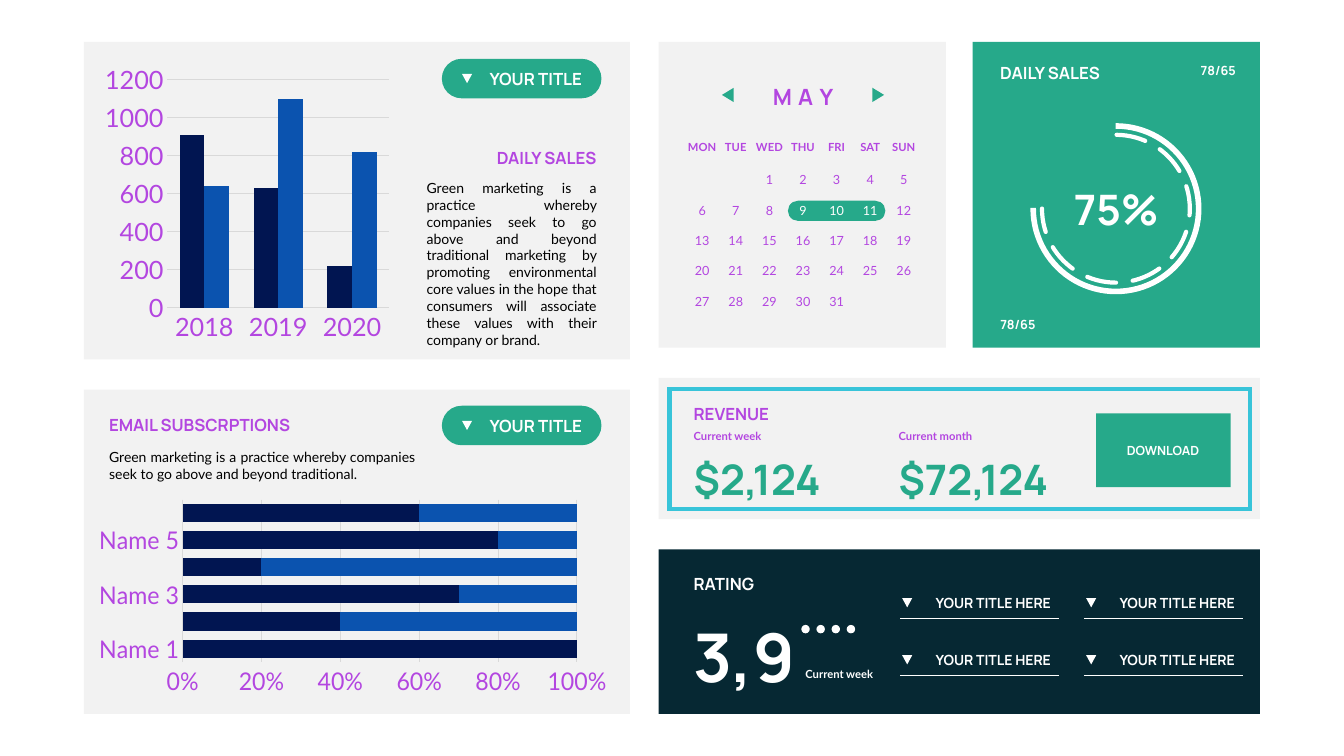
from dataclasses import dataclass
from typing import NamedTuple, Optional, Union

import lxml.etree
import pptx
import pptx.chart.chart
import pptx.chart.data
import pptx.dml.color
import pptx.enum.chart
import pptx.enum.dml
import pptx.enum.shapes
import pptx.enum.text
import pptx.oxml.ns
import pptx.shapes.autoshape
import pptx.shapes.shapetree
import pptx.util

RGB = pptx.dml.color.RGBColor
WHITE = RGB(0xFF, 0xFF, 0xFF)
BLACK = RGB(0x00, 0x00, 0x00)
PANEL_GRAY = RGB(0xF2, 0xF2, 0xF2)
GRID_GRAY = RGB(0xD9, 0xD9, 0xD9)
GREEN = RGB(0x26, 0xA9, 0x8A)
PURPLE = RGB(0xB3, 0x46, 0xE0)
CYAN = RGB(0x38, 0xC4, 0xD9)
INK = RGB(0x06, 0x28, 0x33)
NAVY = RGB(0x01, 0x15, 0x51)
BLUE = RGB(0x0B, 0x53, 0xAF)

HEADING_FONT, BODY_FONT = "Manrope", "Lato"
COLUMNS, ROWS = 160, 90
SLIDE_WIDTH, SLIDE_HEIGHT = pptx.util.Inches(13.33), pptx.util.Inches(7.5)

Form = pptx.enum.shapes.MSO_SHAPE
Align = pptx.enum.text.PP_ALIGN
Anchor = pptx.enum.text.MSO_ANCHOR
ChartKind = pptx.enum.chart.XL_CHART_TYPE
Shapes = Union[pptx.shapes.shapetree.SlideShapes, pptx.shapes.shapetree.GroupShapes]
qn = pptx.oxml.ns.qn


class Box(NamedTuple):
    column: float
    row: float
    columns: float
    rows: float

    def shifted(self, columns: float, rows: float) -> "Box":
        return self._replace(column=self.column + columns, row=self.row + rows)

    def lengths(self) -> tuple:
        across, down = SLIDE_WIDTH / COLUMNS, SLIDE_HEIGHT / ROWS
        return (round(self.column * across), round(self.row * down),
                round(self.columns * across), round(self.rows * down))


@dataclass
class Block:
    form: Form
    box: Box
    fill: Optional[RGB] = None
    line: Optional[RGB] = None
    weight: float = 1
    rotation: float = 0
    adjustments: tuple = ()


@dataclass
class Label:
    text: str
    box: Box
    size: float
    color: RGB
    font: str = HEADING_FONT
    bold: bool = True
    align: Align = Align.LEFT


@dataclass
class Graph:
    kind: ChartKind
    box: Box
    categories: list
    series: dict
    gap: int
    overlap: int
    number_format: str
    plot_area: Optional[dict] = None


def assign(target: object, values: dict) -> None:
    for name, value in values.items():
        setattr(target, name, value)


def draw_block(shapes: Shapes, block: Block) -> pptx.shapes.autoshape.Shape:
    shape = shapes.add_shape(block.form, *block.box.lengths())
    shape.shadow.inherit = False
    shape.rotation = block.rotation
    for index, value in enumerate(block.adjustments):
        shape.adjustments[index] = value
    for fill, color in ((shape.fill, block.fill), (shape.line.fill, block.line)):
        if color is None:
            fill.background()
        else:
            fill.solid()
            fill.fore_color.rgb = color
    if block.line is not None:
        shape.line.width = pptx.util.Pt(block.weight)
        outline = shape.element.spPr.find(qn("a:ln"))
        lxml.etree.SubElement(outline, qn("a:miter")).set("lim", "800000")
    return shape


def draw_label(shapes: Shapes, label: Label) -> pptx.shapes.autoshape.Shape:
    textbox = shapes.add_textbox(*label.box.lengths())
    frame = textbox.text_frame
    assign(frame, {"word_wrap": False, "vertical_anchor": Anchor.MIDDLE,
                   "auto_size": pptx.enum.text.MSO_AUTO_SIZE.SHAPE_TO_FIT_TEXT})
    paragraph = frame.paragraphs[0]
    paragraph.alignment = label.align
    run = paragraph.add_run()
    run.text = label.text
    assign(run.font, {"name": label.font, "size": pptx.util.Pt(label.size), "bold": label.bold})
    run.font.color.rgb = label.color
    return textbox


def draw_passage(shapes: Shapes, text: str, box: Box) -> None:
    passage = draw_label(shapes, Label(text, box, 10, BLACK, BODY_FONT, False, Align.JUSTIFY))
    assign(passage.text_frame, {"word_wrap": True, "vertical_anchor": Anchor.TOP,
                                "margin_left": pptx.util.Inches(0.05)})


def draw_rule(shapes: Shapes, box: Box) -> None:
    left, top, width, height = box.lengths()
    rule = shapes.add_connector(pptx.enum.shapes.MSO_CONNECTOR.STRAIGHT,
                                left, top, left + width, top + height)
    rule.line.color.rgb = WHITE
    rule.line.width = pptx.util.Pt(1)
    lxml.etree.SubElement(rule.element.spPr, qn("a:effectLst"))


def draw_graph(shapes: Shapes, graph: Graph) -> None:
    data = pptx.chart.data.CategoryChartData()
    data.categories = graph.categories
    for name, values in graph.series.items():
        data.add_series(name, values)
    chart = shapes.add_chart(graph.kind, *graph.box.lengths(), data).chart
    assign(chart, {"has_legend": False, "has_title": False})
    assign(chart.font, {"name": BODY_FONT, "size": pptx.util.Pt(18)})
    chart.font.color.rgb = PURPLE
    plot = chart.plots[0]
    assign(plot, {"gap_width": graph.gap, "overlap": graph.overlap, "vary_by_categories": False})
    for series, color in zip(plot.series, (NAVY, BLUE)):
        series.format.fill.solid()
        series.format.fill.fore_color.rgb = color
    no_tick = pptx.enum.chart.XL_TICK_MARK.NONE
    for axis in (chart.category_axis, chart.value_axis):
        assign(axis, {"major_tick_mark": no_tick, "minor_tick_mark": no_tick})
    chart.category_axis.has_major_gridlines = False
    chart.value_axis.has_major_gridlines = True
    for lines in (chart.category_axis.format, chart.value_axis.major_gridlines.format):
        lines.line.color.rgb = GRID_GRAY
        lines.line.width = pptx.util.Pt(0.75)
    chart.value_axis.format.line.fill.background()
    assign(chart.value_axis.tick_labels,
           {"number_format": graph.number_format, "number_format_is_linked": False})
    if graph.plot_area:
        place_plot(chart, graph.plot_area)


def place_plot(chart: pptx.chart.chart.Chart, plot_area: dict) -> None:
    area = chart.element.find(f".//{qn('c:plotArea')}")
    for former in area.findall(qn("c:layout")):
        area.remove(former)
    layout = lxml.etree.Element(qn("c:layout"))
    area.insert(0, layout)
    manual = lxml.etree.SubElement(layout, qn("c:manualLayout"))
    settings = {"layoutTarget": "inner", "xMode": "edge", "yMode": "edge", **plot_area}
    for name, value in settings.items():
        lxml.etree.SubElement(manual, qn(f"c:{name}")).set("val", str(value))


def draw_calendar(shapes: Shapes) -> None:
    for column, rotation in ((85.8, 270), (103.7, 90)):
        draw_block(shapes, Block(Form.ISOSCELES_TRIANGLE, Box(column, 10.6, 1.7, 1.4), GREEN, rotation=rotation))
    month = draw_label(shapes, Label("MA", Box(90.5, 9.3, 10.2, 4.4), 16, PURPLE, align=Align.CENTER))
    next(month.element.iter(qn("a:rPr"))).set("spc", "450")
    last = month.text_frame.paragraphs[0].add_run()
    last.text = "Y"
    assign(last.font, {"name": HEADING_FONT, "size": pptx.util.Pt(16), "bold": True})
    last.font.color.rgb = PURPLE
    draw_block(shapes, Block(Form.ROUNDED_RECTANGLE, Box(93.8, 23.9, 11.6, 2.4), GREEN, adjustments=(0.5,)))
    cell = Box(80.4, 16.05, 6.4, 2.9)
    for column, weekday in enumerate("MON TUE WED THU FRI SAT SUN".split()):
        draw_label(shapes, Label(weekday, cell.shifted(4 * column, 0), 8, PURPLE, BODY_FONT, align=Align.CENTER))
    for day in range(1, 32):
        week, column = divmod(day + 1, 7)
        color = WHITE if day in (9, 10, 11) else PURPLE
        place = cell.shifted(4 * column, 3.87 + 3.63 * week)
        draw_label(shapes, Label(str(day), place, 9, color, BODY_FONT, False, Align.CENTER))


def draw_gauge(shapes: Shapes) -> None:
    gauge = shapes.add_group_shape().shapes
    draw_block(gauge, Block(Form.ARC, Box(123, 15, 19.7, 19.7), None, WHITE, 4, adjustments=(161.91, 108.3)))
    dashes = draw_block(gauge, Block(Form.ARC, Box(124.05, 16.05, 17.6, 17.6), None, WHITE, 3,
                                     adjustments=(162.32, 108.08)))
    dashes.line.dash_style = pptx.enum.dml.MSO_LINE.LONG_DASH
    dashes.element.spPr.find(qn("a:ln")).set("cap", "rnd")
    draw_label(gauge, Label("75%", Box(126.5, 21.2, 12.8, 7.3), 30, WHITE, align=Align.CENTER))


def draw_title_pill(shapes: Shapes, row: float) -> None:
    draw_block(shapes, Block(Form.ROUNDED_RECTANGLE, Box(52.6, row, 19, 4.7), GREEN, adjustments=(0.5,)))
    draw_label(shapes, Label("YOUR TITLE", Box(57.1, row + 0.55, 13.6, 3.6), 12, WHITE))
    draw_block(shapes, Block(Form.ISOSCELES_TRIANGLE, Box(55, row + 1.8, 1.2, 1.1), WHITE, rotation=180))


def draw_rating_entry(shapes: Shapes, column: float, row: float) -> None:
    draw_label(shapes, Label("YOUR TITLE HERE", Box(column + 3, row, 16.2, 3.2), 10, WHITE))
    draw_block(shapes, Block(Form.ISOSCELES_TRIANGLE, Box(column + 0.2, row + 1, 1.2, 1.1), WHITE, rotation=180))
    draw_rule(shapes, Box(column, row + 3.4, 18.9, 0))


PANELS = [
    Block(Form.RECTANGLE, Box(10, 5, 65, 37.8), PANEL_GRAY),
    Block(Form.RECTANGLE, Box(78.4, 5, 34.2, 36.4), PANEL_GRAY),
    Block(Form.RECTANGLE, Box(115.8, 5, 34.2, 36.4), GREEN),
    Block(Form.RECTANGLE, Box(10, 46.4, 65, 38.6), PANEL_GRAY),
    Block(Form.RECTANGLE, Box(78.4, 45, 71.6, 16.8), PANEL_GRAY),
    Block(Form.RECTANGLE, Box(78.4, 65.4, 71.6, 19.6), INK),
    Block(Form.RECTANGLE, Box(79.7, 46.3, 69.1, 14.3), None, CYAN, 3),
    Block(Form.RECTANGLE, Box(130.5, 49.2, 16, 8.8), GREEN),
]
LABELS = [
    Label("DAILY SALES", Box(57.4, 17, 14.8, 3.6), 12, PURPLE, align=Align.RIGHT),
    Label("DAILY SALES", Box(117.9, 6.9, 14.8, 3.6), 12, WHITE),
    Label("78/65", Box(117.9, 37.1, 6.8, 3), 9, WHITE),
    Label("78/65", Box(141.5, 6.9, 6.8, 3), 9, WHITE, align=Align.RIGHT),
    Label("EMAIL SUBSCRPTIONS", Box(11.8, 48.8, 24.4, 3.6), 12, PURPLE),
    Label("REVENUE", Box(81.4, 47.5, 11.4, 3.6), 12, PURPLE),
    Label("Current week", Box(81.4, 50.5, 10.7, 2.9), 8, PURPLE, BODY_FONT),
    Label("$2,124", Box(81.4, 53.3, 18.2, 7.3), 30, GREEN),
    Label("Current month", Box(105.8, 50.5, 11.4, 2.9), 8, PURPLE, BODY_FONT),
    Label("$72,124", Box(105.8, 53.3, 21, 7.3), 30, GREEN),
    Label("DOWNLOAD", Box(132.7, 52.1, 11.5, 3), 9, WHITE, align=Align.CENTER),
    Label("RATING", Box(81.4, 67.7, 10.1, 3.6), 12, WHITE),
    Label("3,9", Box(81.4, 72.6, 14.6, 10.9), 48, WHITE),
    Label("Current week", Box(94.7, 78.8, 10.7, 2.9), 8, WHITE, BODY_FONT),
]
PASSAGES = {
    "Green marketing is a practice whereby companies seek to go above and beyond traditional marketing by "
    "promoting environmental core values in the hope that consumers will associate these values with their "
    "company or brand.": Box(50.2, 20.8, 22, 21.4),
    "Green marketing is a practice whereby companies seek to go above and beyond "
    "traditional.": Box(12.4, 52.8, 38.2, 5.3),
}
GRAPHS = [
    Graph(ChartKind.COLUMN_CLUSTERED, Box(11.8, 7, 35.2, 34.4), ["2018", "2019", "2020"],
          {"Series 1": (910, 630, 220), "Series 2": (640, 1100, 820)}, 100, 0, "General"),
    Graph(ChartKind.BAR_STACKED_100, Box(11.8, 58.6, 60.4, 24.2), [f"Name {n}" for n in range(1, 7)],
          {"Series 1": (100, 40, 70, 20, 80, 60), "Series 2": (0, 60, 30, 80, 20, 40)}, 50, 100, "0%",
          {"x": 0.115, "y": 0.038, "w": 0.846, "h": 0.825}),
]


def main() -> None:
    deck = pptx.Presentation()
    assign(deck, {"slide_width": SLIDE_WIDTH, "slide_height": SLIDE_HEIGHT})
    shapes = deck.slides.add_slide(deck.slide_layouts[6]).shapes
    for panel in PANELS:
        draw_block(shapes, panel)
    for graph in GRAPHS:
        draw_graph(shapes, graph)
    for row in (7, 48.3):
        draw_title_pill(shapes, row)
    for label in LABELS:
        draw_label(shapes, label)
    for text, box in PASSAGES.items():
        draw_passage(shapes, text, box)
    draw_calendar(shapes)
    draw_gauge(shapes)
    for dot in range(4):
        draw_block(shapes, Block(Form.OVAL, Box(95.4 + 1.8 * dot, 74.4, 1, 1), WHITE))
    for row in (70.2, 77):
        for column in (107.2, 129.1):
            draw_rating_entry(shapes, column, row)
    deck.save("out.pptx")


if __name__ == "__main__":
    main()
